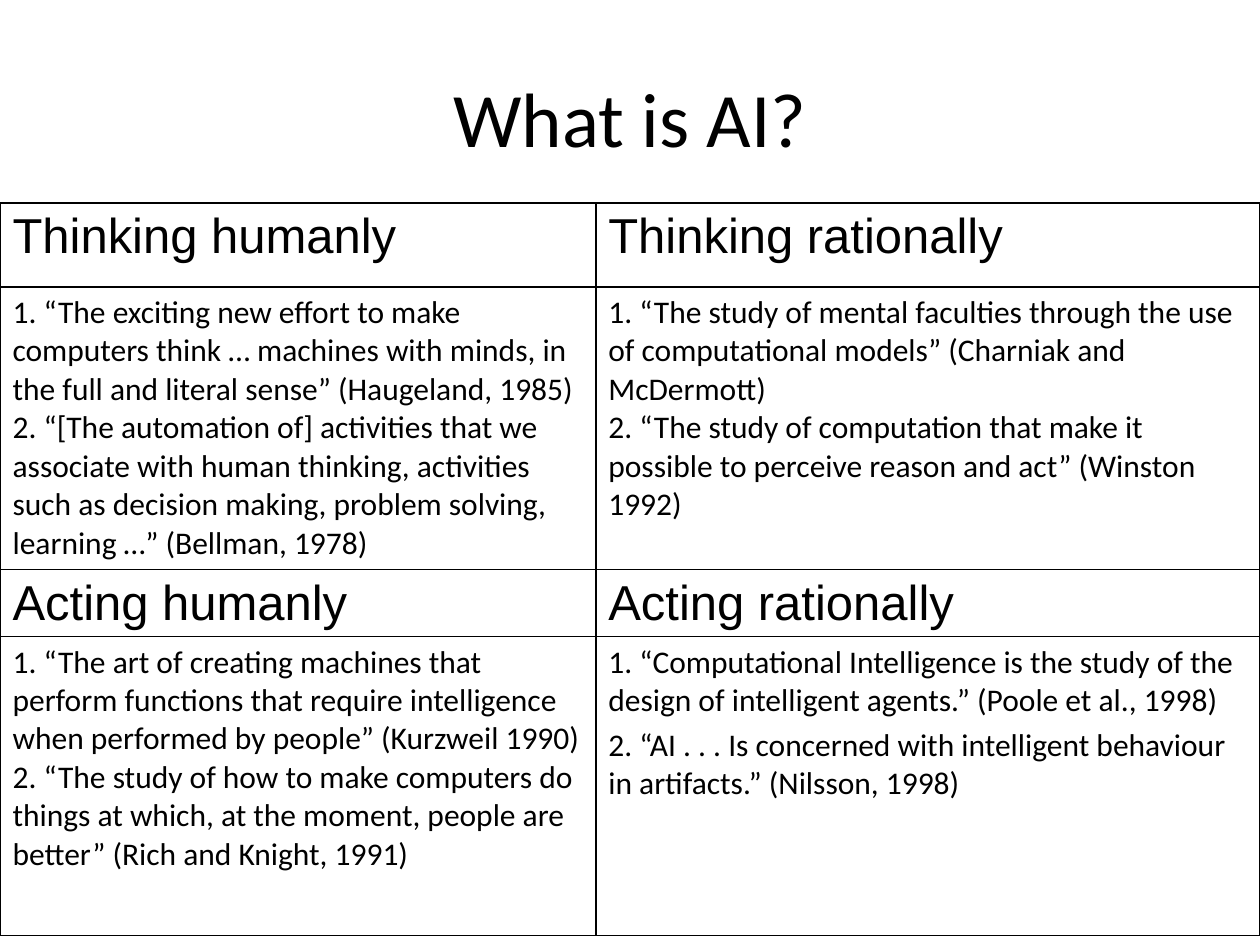
from pptx import Presentation
from pptx.dml.color import RGBColor
from pptx.enum.text import MSO_ANCHOR, PP_ALIGN
from pptx.oxml import parse_xml
from pptx.oxml.ns import nsdecls
from pptx.util import Cm, Pt

BLACK = RGBColor(0x00, 0x00, 0x00)
WHITE = RGBColor(0xFF, 0xFF, 0xFF)

COLUMN_WIDTHS = [12.01, 13.39]
ROW_HEIGHTS = [1.7, 5.69, 1.35, 6.02]

# Heading rows alternate with rows of definitions.
ROWS = [
    [["Thinking humanly"], ["Thinking rationally"]],
    [
        [
            "1. “The exciting new effort to make computers think … machines with minds, "
            "in the full and literal sense” (Haugeland, 1985)",
            "2. “[The automation of] activities that we associate with human thinking, "
            "activities such as decision making, problem solving,",
            "learning …” (Bellman, 1978)",
        ],
        [
            "1. “The study of mental faculties through the use",
            "of computational models” (Charniak and McDermott)",
            "2. “The study of computation that make it possible to perceive reason "
            "and act” (Winston 1992)",
        ],
    ],
    [["Acting humanly"], ["Acting rationally"]],
    [
        [
            "1. “The art of creating machines that perform functions that require "
            "intelligence when performed by people” (Kurzweil 1990)",
            "2. “The study of how to make computers do",
            "things at which, at the moment, people are better” (Rich and Knight, 1991)",
        ],
        [
            "1. “Computational Intelligence is the study of the design of intelligent "
            "agents.” (Poole et al., 1998)",
            "2. “AI . . . Is concerned with intelligent behaviour in artifacts.” "
            "(Nilsson, 1998)",
        ],
    ],
]


def write(para, text, size=18, font="Calibri", align=PP_ALIGN.LEFT, before=0):
    para.alignment = align
    para.space_before = Pt(before)
    span = para.add_run()
    span.text = text
    span.font.size = Pt(size)
    span.font.name = font
    span.font.color.rgb = BLACK


def add_borders(cell):
    """Draw a one-point line on all four sides; call before setting the fill."""
    properties = cell._tc.get_or_add_tcPr()
    for side in ("lnL", "lnR", "lnT", "lnB"):
        properties.append(parse_xml(
            f'<a:{side} {nsdecls("a")} w="{Pt(1)}"><a:solidFill>'
            f'<a:srgbClr val="{BLACK}"/></a:solidFill></a:{side}>'
        ))


deck = Presentation()
deck.slide_width, deck.slide_height = Cm(25.4), Cm(19.05)
page = deck.slides.add_slide(deck.slide_layouts[5])

title = page.shapes.title
title.left, title.top, title.width, title.height = Cm(1.27), Cm(0.76), Cm(22.86), Cm(3.18)
title.text_frame.vertical_anchor = MSO_ANCHOR.MIDDLE
write(title.text_frame.paragraphs[0], "What is AI?", size=44, align=PP_ALIGN.CENTER)

table = page.shapes.add_table(
    len(ROW_HEIGHTS), len(COLUMN_WIDTHS),
    Cm(0), Cm(4.09), Cm(sum(COLUMN_WIDTHS)), Cm(sum(ROW_HEIGHTS)),
).table
table.first_row = False
table.horz_banding = False
for column, width in zip(table.columns, COLUMN_WIDTHS):
    column.width = Cm(width)

for r, (height, row) in enumerate(zip(ROW_HEIGHTS, ROWS)):
    table.rows[r].height = Cm(height)
    is_heading = r % 2 == 0
    for c, lines in enumerate(row):
        cell = table.cell(r, c)
        add_borders(cell)
        cell.fill.solid()
        cell.fill.fore_color.rgb = WHITE
        frame = cell.text_frame
        for i, line in enumerate(lines):
            para = frame.add_paragraph() if i else frame.paragraphs[0]
            if is_heading:
                write(para, line, size=28, font="Arial")
            else:
                spaced = i > 0 and (r, c) == (3, 1)
                write(para, line, before=3.6 if spaced else 0)

deck.save("out.pptx")
